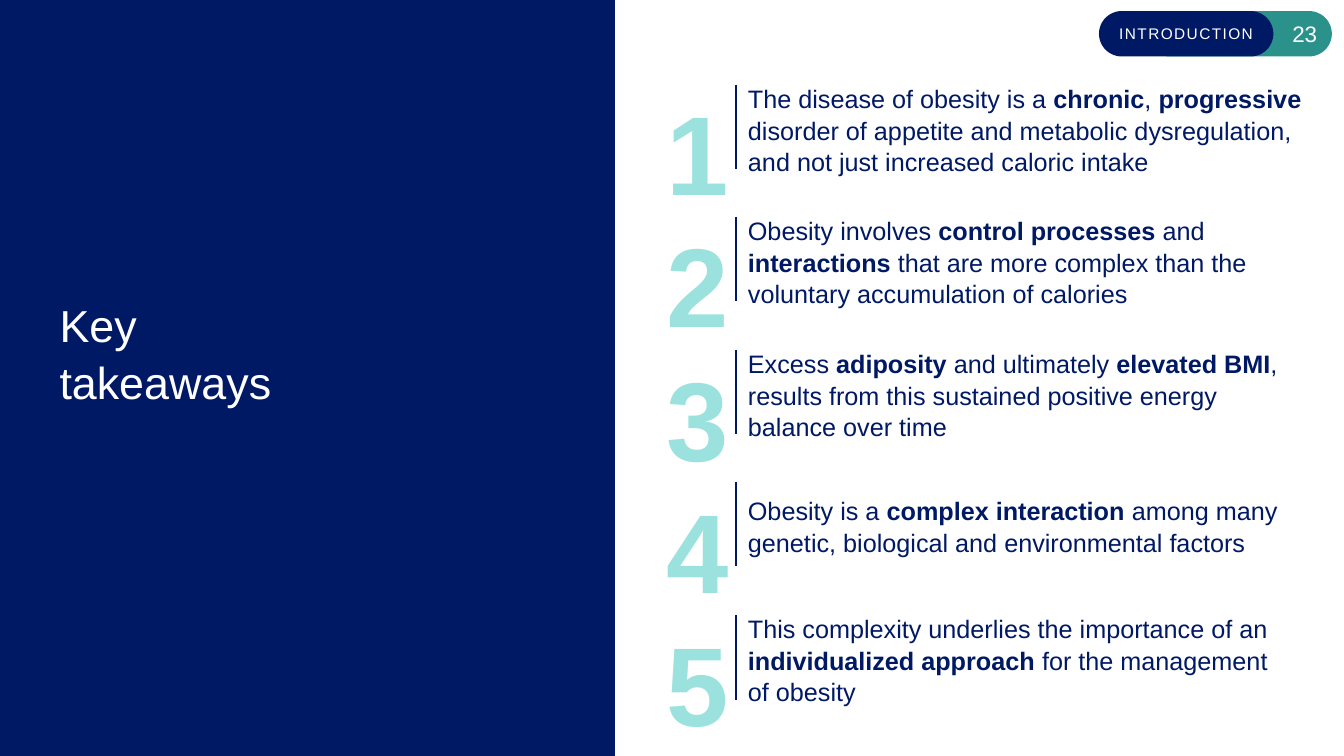
"""Build the key takeaways slide."""
from dataclasses import dataclass

from lxml import etree
from pptx import Presentation
from pptx.dml.color import RGBColor
from pptx.enum.shapes import MSO_CONNECTOR, MSO_SHAPE
from pptx.enum.text import MSO_ANCHOR, MSO_AUTO_SIZE, PP_ALIGN
from pptx.oxml.ns import qn
from pptx.util import Pt

RECT, PILL = MSO_SHAPE.RECTANGLE, MSO_SHAPE.ROUNDED_RECTANGLE
STRAIGHT = MSO_CONNECTOR.STRAIGHT
TOP, MIDDLE = MSO_ANCHOR.TOP, MSO_ANCHOR.MIDDLE
LEFT, CENTER, RIGHT = PP_ALIGN.LEFT, PP_ALIGN.CENTER, PP_ALIGN.RIGHT
NO_FIT = MSO_AUTO_SIZE.NONE
EMU_PER_PX = 9144
TITLE_ONLY = 5


@dataclass(frozen=True)
class Theme:
    font: str = "Arial"
    navy: str = "001965"
    teal: str = "2A918B"
    mint: str = "9BE2DE"
    white: str = "FFFFFF"
    title: int = 32
    number: int = 80
    body: int = 18
    page: int = 16
    section: int = 11
    text_spacing: float = 1.05
    number_spacing: float = 1.28


def px(*lengths):
    return [n * EMU_PER_PX for n in lengths]


class Deck:
    def __init__(self, theme):
        self.theme = theme
        self.prs = Presentation()
        self.prs.slide_width, self.prs.slide_height = px(1333, 750)
        self.slide = self.prs.slides.add_slide(self.prs.slide_layouts[TITLE_ONLY])

    def frame(self, tf, anchor, insets=(0, 0, 0, 0), wrap=True):
        tf.auto_size = NO_FIT
        tf.word_wrap = wrap
        tf.vertical_anchor = anchor
        tf.margin_left, tf.margin_top, tf.margin_right, tf.margin_bottom = px(*insets)
        return tf.paragraphs[0]

    def run(self, p, text, size, color, bold=False):
        r = p.add_run()
        r.text = text
        r.font.name = self.theme.font
        r.font.size = Pt(size)
        r.font.bold = bold
        r.font.color.rgb = RGBColor.from_string(color)
        return r

    def shape(self, kind, box, fill):
        sp = self.slide.shapes.add_shape(kind, *px(*box))
        sp.shadow.inherit = False
        sp.fill.solid()
        sp.fill.fore_color.rgb = RGBColor.from_string(fill)
        sp.line.fill.background()
        return sp

    def pill(self, box, fill, text, size, align, tracking=0):
        sp = self.shape(PILL, box, fill)
        sp.adjustments[0] = 0.5
        p = self.frame(sp.text_frame, MIDDLE, (8, 4, 8, 4))
        p.alignment = align
        r = self.run(p, text, size, self.theme.white)
        if tracking:
            r.font._element.set("spc", str(tracking * 100))

    def title(self, box, lines):
        sp = self.slide.shapes.title
        sp.left, sp.top, sp.width, sp.height = px(*box)
        p = self.frame(sp.text_frame, MIDDLE)
        p.alignment = LEFT
        p.line_spacing = self.theme.text_spacing
        for i, line in enumerate(lines):
            if i:
                p.add_line_break()
            self.run(p, line, self.theme.title, self.theme.white)
        self.slide.shapes._spTree.append(sp._element)

    def number(self, group, box, text):
        sp = group.shapes.add_textbox(*px(*box))
        p = self.frame(sp.text_frame, TOP, wrap=False)
        p.line_spacing = self.theme.number_spacing
        self.run(p, text, self.theme.number, self.theme.mint, True)

    def body(self, group, box, parts):
        sp = group.shapes.add_textbox(*px(*box))
        p = self.frame(sp.text_frame, TOP, (10, 5, 10, 5))
        p.line_spacing = self.theme.text_spacing
        for i, part in enumerate(parts):
            self.run(p, part, self.theme.body, self.theme.navy, i % 2 == 1)

    def rule(self, group, x, top, bottom):
        line = group.shapes.add_connector(STRAIGHT, *px(x, top, x, bottom))
        line.line.color.rgb = RGBColor.from_string(self.theme.navy)
        line.line.width = Pt(1)
        etree.SubElement(line._element.spPr, qn("a:effectLst"))

    def takeaway(self, number, top, width, line_count, parts):
        group = self.slide.shapes.add_group_shape()
        height = 30 * line_count + 11
        self.number(group, (661, top, 62, 147), str(number))
        self.body(group, (732, top + 30 + (101 - height) // 2, width, height), parts)
        self.rule(group, 730, top + 38, top + 122)


TAKEAWAYS = [
    (575, 3, ["The disease of obesity is a ", "chronic", ", ", "progressive",
              " disorder of appetite and metabolic dysregulation, "
              "and not just increased caloric intake"]),
    (556, 3, ["Obesity involves ", "control processes ", "and ", "interactions",
              " that are more complex than the voluntary accumulation of calories"]),
    (556, 3, ["Excess ", "adiposity", " and ultimately ", "elevated BMI",
              ", results from this sustained positive energy balance over time"]),
    (556, 2, ["Obesity is a ", "complex interaction ",
              "among many genetic, biological and environmental factors"]),
    (556, 3, ["This complexity underlies the importance of an ",
              "individualized approach ", "for the management of obesity"]),
]


def main():
    theme = Theme()
    deck = Deck(theme)
    deck.shape(RECT, (0, 0, 610, 750), theme.navy)
    deck.pill((1138, 11, 183, 45), theme.teal, "23", theme.page, RIGHT)
    deck.pill((1090, 11, 173, 45), theme.navy, "INTRODUCTION", theme.section, CENTER, 1)
    deck.title((59, 45, 506, 608), ["Key ", "takeaways"])
    for i, (width, line_count, parts) in enumerate(TAKEAWAYS):
        deck.takeaway(i + 1, 46 + i * 263 // 2, width, line_count, parts)
    deck.prs.save("out.pptx")


if __name__ == "__main__":
    main()
